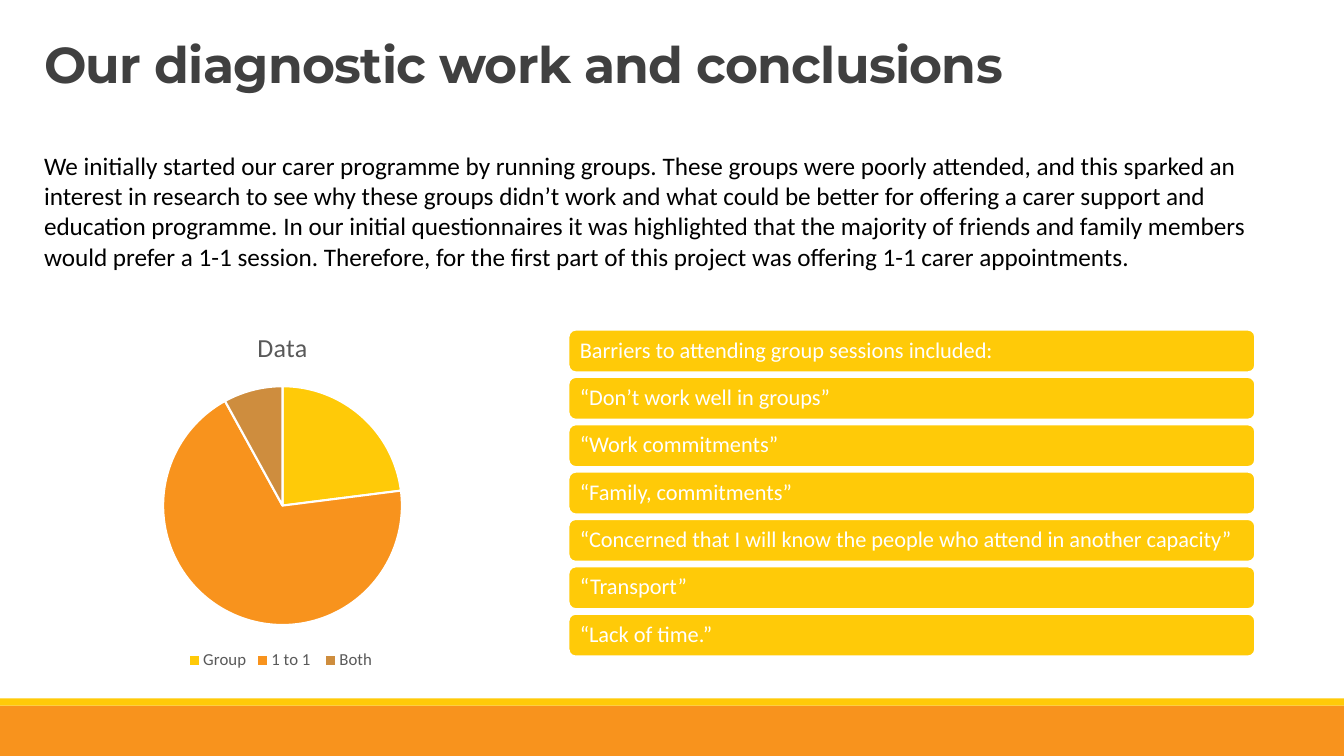
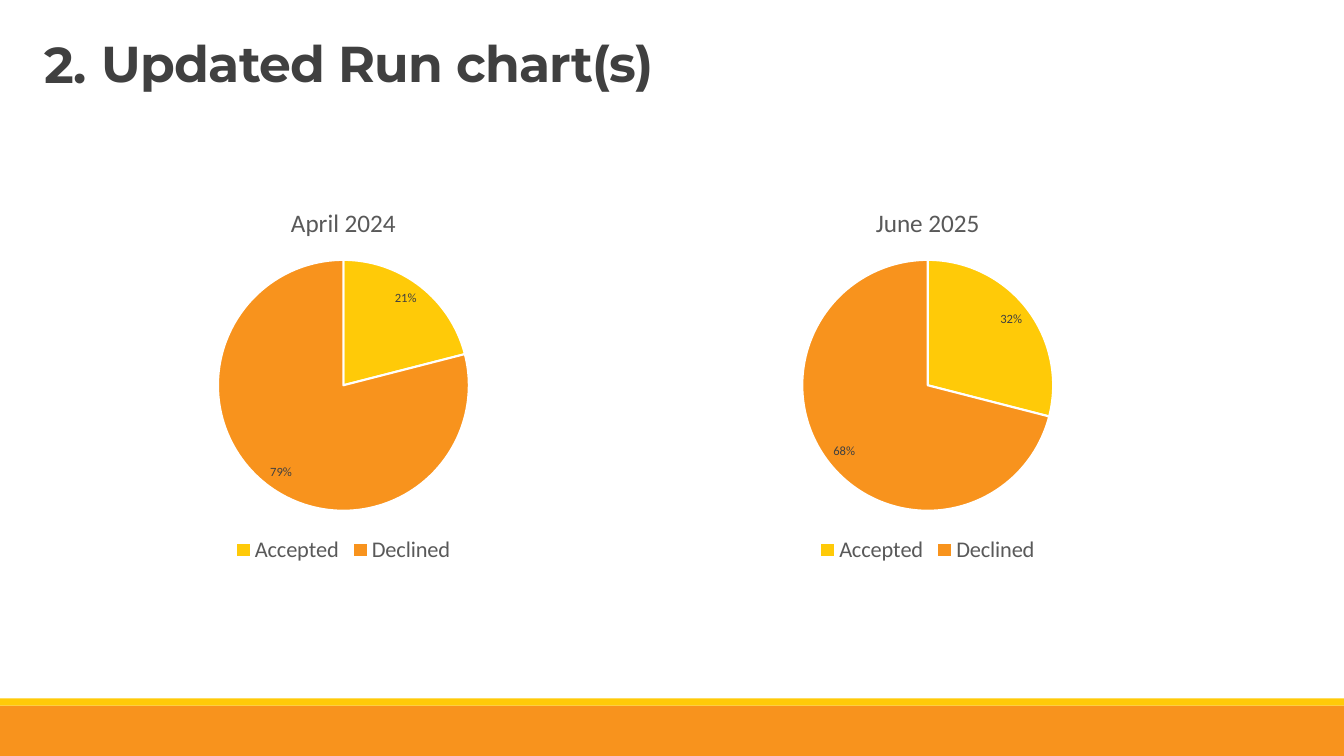
from pptx import Presentation
from pptx import util as u
from pptx.chart import data as chart_data
from pptx.dml import color
from pptx.enum import chart as ch, shapes, text

YELLOW, ORANGE, BROWN = "FFCA08", "F8931D", "CE8D3E"
WHITE, BLACK, DARK, GREY = "FFFFFF", "000000", "404040", "595959"
BODY_FONT, HEADING_FONT = "Calibri", "Montserrat"

PAGE_WIDTH, PAGE_HEIGHT = 33.87, 19.05
TITLE_BOX = (0.86, 0.38, 33, 2.11)
BANDS = [(17.78, 1.27, ORANGE), (17.6, 0.18, YELLOW)]  # top, height, colour


def rgb(hex_code):
    return color.RGBColor.from_string(hex_code)


def cm(box):
    return [u.Cm(length) for length in box]


def set_font(font, size, hex_code, name=BODY_FONT, bold=False):
    font.size, font.name, font.bold = u.Pt(size), name, bold
    font.color.rgb = rgb(hex_code)


def add_block(slide, kind, box, fill):
    block = slide.shapes.add_shape(kind, *cm(box))
    block.shadow.inherit = False
    block.fill.solid()
    block.fill.fore_color.rgb = rgb(fill)
    block.line.fill.background()
    return block


# Shared parts
def add_master_bands(prs, slide):
    """Draw the footer bands and move them to the back of the master."""
    tree = prs.slide_master.shapes.element
    for position, (top, height, fill) in enumerate(BANDS, start=2):
        band = add_block(slide, shapes.MSO_SHAPE.RECTANGLE,
                         (0, top, PAGE_WIDTH, height), fill)
        tree.insert(position, band.element)


def write_heading(frame, wording, line_spacing, space_after=0):
    frame.text = wording
    frame.word_wrap = True
    frame.auto_size = text.MSO_AUTO_SIZE.NONE
    frame.vertical_anchor = text.MSO_ANCHOR.BOTTOM
    line = frame.paragraphs[0]
    line.alignment = text.PP_ALIGN.LEFT
    line.line_spacing = line_spacing
    line.space_after = u.Pt(space_after)
    set_font(line.font, 36, DARK, HEADING_FONT, True)
    # Tighter letter spacing
    line._p.get_or_add_pPr().get_or_add_defRPr().set("spc", "-50")


def add_titled_slide(prs, layout, wording):
    slide = prs.slides.add_slide(layout)
    write_heading(slide.shapes.title.text_frame, wording, 1.07, 8)
    return slide


# Regions
def add_intro(slide, box, wording):
    frame = slide.shapes.add_textbox(*cm(box)).text_frame
    frame.word_wrap = True
    frame.text = wording
    set_font(frame.paragraphs[0].font, 18, BLACK)


def add_bars(slide, box, wordings, bar_height=1.07):
    left, top, width, height = box
    pitch = (height - bar_height) / (len(wordings) - 1)
    for row, wording in enumerate(wordings):
        bar = add_block(slide, shapes.MSO_SHAPE.ROUNDED_RECTANGLE,
                        (left, top + row * pitch, width, bar_height), YELLOW)
        bar.line.color.rgb = rgb(WHITE)
        bar.line.width = u.Pt(1.25)
        frame = bar.text_frame
        frame.margin_left = frame.margin_right = u.Cm(0.23)
        frame.margin_top = frame.margin_bottom = u.Cm(0.1)
        frame.vertical_anchor = text.MSO_ANCHOR.MIDDLE
        frame.text = wording
        line = frame.paragraphs[0]
        line.alignment = text.PP_ALIGN.LEFT
        line.line_spacing = 0.9
        set_font(line.font, 16, WHITE)


def add_pie(slide, box, title, series_name, shares, title_size, legend_size):
    figures = chart_data.CategoryChartData()
    figures.categories = list(shares)
    figures.add_series(series_name, list(shares.values()))
    pie = slide.shapes.add_chart(ch.XL_CHART_TYPE.PIE, *cm(box), figures).chart
    set_font(pie.font, 10, BLACK)

    pie.has_title = True
    pie.chart_title.include_in_layout = False
    pie.chart_title.text_frame.text = title
    heading = pie.chart_title.text_frame.paragraphs[0]
    set_font(heading.font, title_size, GREY)

    pie.has_legend = True
    pie.legend.position = ch.XL_LEGEND_POSITION.BOTTOM
    pie.legend.include_in_layout = False
    set_font(pie.legend.font, legend_size, GREY)

    plot = pie.plots[0]
    plot.vary_by_categories = True
    for index, fill in zip(range(len(shares)), (YELLOW, ORANGE, BROWN)):
        wedge = plot.series[0].points[index].format
        wedge.fill.solid()
        wedge.fill.fore_color.rgb = rgb(fill)
        wedge.line.color.rgb = rgb(WHITE)
        wedge.line.width = u.Pt(1.5)
    return plot


def add_percent_labels(plot, wordings=()):
    """Label the wedges with their share, or with the given wordings."""
    inside = ch.XL_LABEL_POSITION.INSIDE_END
    plot.has_data_labels = True
    labels = plot.data_labels
    labels.show_percentage, labels.show_value = True, False
    labels.number_format, labels.number_format_is_linked = "0%", False
    labels.position = inside
    set_font(labels.font, 9, DARK)
    for index, wording in enumerate(wordings):
        label = plot.series[0].points[index].data_label
        label.text_frame.text = wording
        set_font(label.text_frame.paragraphs[0].runs[0].font, 9, DARK)
        label.position = inside


# Slides
def build_diagnostic(prs, layout):
    slide = add_titled_slide(prs, layout, "Our diagnostic work and conclusions")
    add_intro(slide, (0.86, 3.66, 31.93, 3.33),
              "We initially started our carer programme by running groups. "
              "These groups were poorly attended, and this sparked an interest "
              "in research to see why these groups didn’t work and what could "
              "be better for offering a carer support and education programme. "
              "In our initial questionnaires it was highlighted that the "
              "majority of friends and family members would prefer a 1-1 "
              "session. Therefore, for the first part of this project was "
              "offering 1-1 carer appointments.")
    add_bars(slide, (14.33, 8.31, 17.3, 8.23), [
        "Barriers to attending group sessions included:",
        "“Don’t work well in groups”",
        "“Work commitments”",
        "“Family, commitments”",
        "“Concerned that I will know the people who attend in another capacity”",
        "“Transport”",
        "“Lack of time.”",
    ])
    add_pie(slide, (0.86, 7.85, 12.52, 9.14), "Data", "Data",
            {"Group": 23, "1 to 1 ": 69, "Both ": 8}, 18.6, 12)
    return slide


def build_run_charts(prs, layout):
    slide = add_titled_slide(prs, layout, "2.")
    heading = slide.shapes.add_textbox(*cm((2.31, 0.64, 27.94, 1.83)))
    write_heading(heading.text_frame, "Updated Run chart(s)", 0.85)
    for month, left, width, accepted, wordings in [
        ("April 2024", 3.18, 10.95, 21, ()),
        ("June 2025", 15.62, 15.52, 29, ("32%", "68%")),
    ]:
        plot = add_pie(slide, (left, 4.72, width, 9.6), month, "Series 1",
                       {"Accepted": accepted, "Declined": 100 - accepted},
                       18, 16)
        add_percent_labels(plot, wordings)


def main():
    prs = Presentation()
    prs.slide_width, prs.slide_height = cm((PAGE_WIDTH, PAGE_HEIGHT))
    layout = prs.slide_layouts.get_by_name("Title Only")
    title = layout.placeholders[0]
    title.left, title.top, title.width, title.height = cm(TITLE_BOX)

    first_slide = build_diagnostic(prs, layout)
    add_master_bands(prs, first_slide)
    build_run_charts(prs, layout)
    prs.save("out.pptx")


if __name__ == "__main__":
    main()
